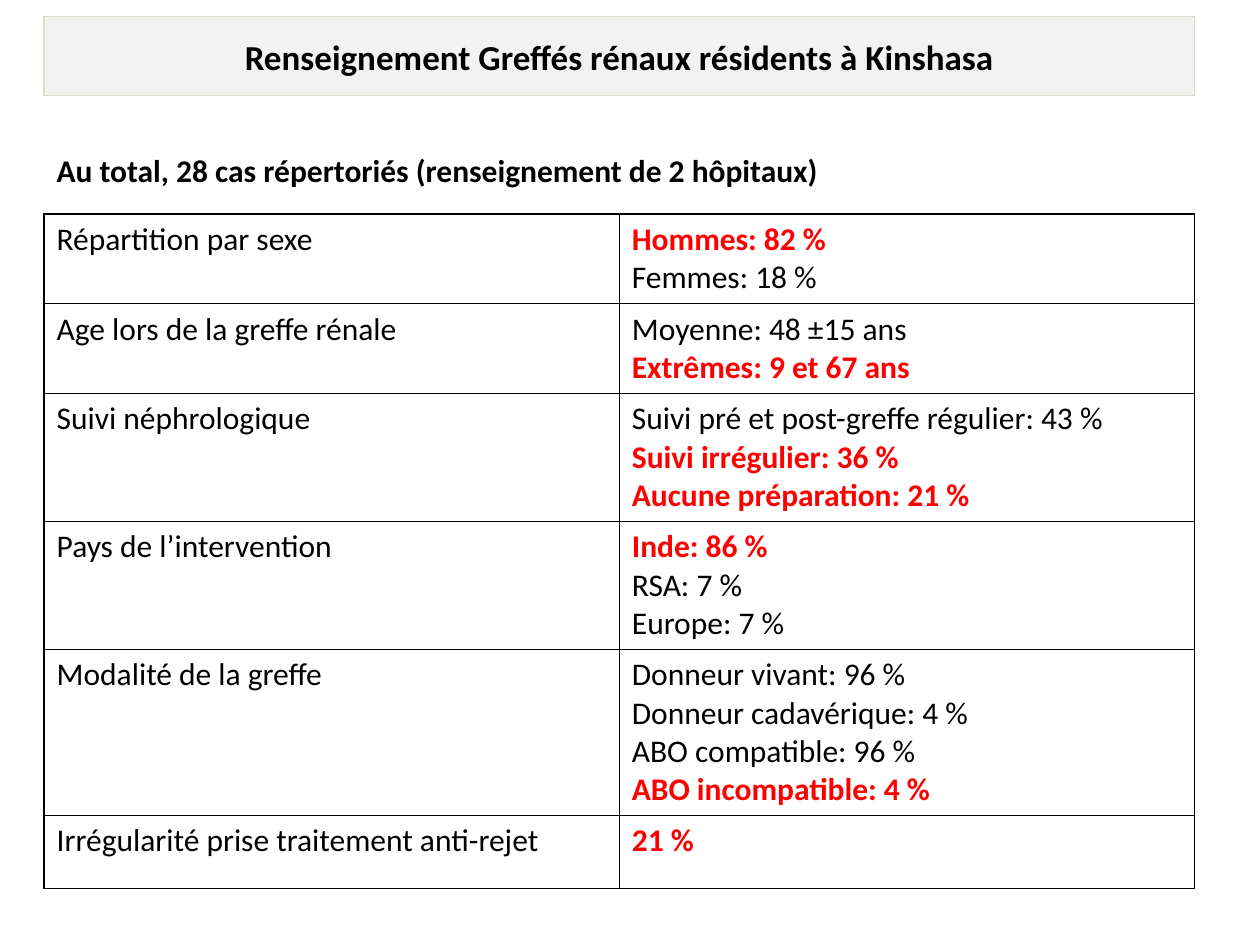
from lxml.etree import SubElement
from pptx import Presentation
from pptx.dml.color import RGBColor as Color
from pptx.enum.text import MSO_ANCHOR as Anchor, PP_ALIGN as Align
from pptx.oxml.ns import qn
from pptx.util import Inches, Pt

LEFT, WIDTH = 0.35, 9.13
BLACK, RED = "000000", "FF0000"
ROWS = [
    ("Répartition par sexe", ["Hommes: 82 %", "Femmes: 18 %"], {0}),
    ("Age lors de la greffe rénale",
     ["Moyenne: 48 ±15 ans", "Extrêmes: 9 et 67 ans"], {1}),
    ("Suivi néphrologique",
     ["Suivi pré et post-greffe régulier: 43 %", "Suivi irrégulier: 36 %",
      "Aucune préparation: 21 %"], {1, 2}),
    ("Pays de l’intervention",
     ["Inde: 86 %", "RSA: 7 %", "Europe: 7 %"], {0}),
    ("Modalité de la greffe",
     ["Donneur vivant: 96 %", "Donneur cadavérique: 4 %",
      "ABO compatible: 96 %", "ABO incompatible: 4 %"], {3}),
    ("Irrégularité prise traitement anti-rejet", ["21 %"], {0}),
]


def paint(target, color):
    """Give a fill or a font colour a solid hex colour."""
    target.solid()
    target.fore_color.rgb = Color.from_string(color)


def write(para, text, size=18, color=BLACK, bold=False, align=Align.LEFT):
    """Write one formatted run in a paragraph."""
    para.alignment = align
    span = para.add_run()
    span.text = text
    span.font.name = "Calibri"
    span.font.size = Pt(size)
    span.font.bold = bold
    paint(span.font.fill, color)


def place(shape, left, top, width, height):
    """Move and size a shape in inches."""
    shape.left, shape.top = Inches(left), Inches(top)
    shape.width, shape.height = Inches(width), Inches(height)


def add_title(page, text):
    """Format the title placeholder as a grey banner."""
    title = page.shapes.title
    place(title, LEFT, 0.13, WIDTH, 0.63)
    paint(title.fill, "F2F2F2")
    paint(title.line.fill, "DEDED0")
    title.line.width = Pt(0.75)
    title.text_frame.vertical_anchor = Anchor.MIDDLE
    write(title.text_frame.paragraphs[0], text, size=20, bold=True,
          align=Align.CENTER)


def add_summary(page, text):
    """Add the bold sentence above the table."""
    box = page.shapes.add_textbox(Inches(LEFT), Inches(1.15), Inches(6.85),
                                  Inches(0.4))
    box.text_frame.word_wrap = True
    write(box.text_frame.paragraphs[0], text, bold=True)


def add_borders(cell):
    """Draw thin black lines on all four sides of a cell."""
    properties = cell._tc.get_or_add_tcPr()
    for index, side in enumerate(("lnL", "lnR", "lnT", "lnB")):
        line = properties.makeelement(qn(f"a:{side}"), {"w": str(Pt(1))})
        fill = SubElement(line, qn("a:solidFill"))
        SubElement(fill, qn("a:srgbClr"), val=BLACK)
        properties.insert(index, line)


def fill_cell(cell, lines, marked=()):
    """Write the lines of a cell, with the marked ones in bold red."""
    cell.fill.background()
    add_borders(cell)
    frame = cell.text_frame
    for index, text in enumerate(lines):
        para = frame.add_paragraph() if index else frame.paragraphs[0]
        strong = index in marked
        write(para, text, color=RED if strong else BLACK, bold=strong)


def add_findings(page, rows):
    """Add the two-column table, each row as tall as its lines need."""
    heights = [max(0.58, 0.1 + 0.3 * len(lines)) for _, lines, _ in rows]
    table = page.shapes.add_table(len(rows), 2, Inches(LEFT), Inches(1.7),
                                  Inches(WIDTH), Inches(sum(heights))).table
    table.first_row = table.horz_banding = False
    for index, (label, lines, marked) in enumerate(rows):
        table.rows[index].height = Inches(heights[index])
        fill_cell(table.cell(index, 0), [label])
        fill_cell(table.cell(index, 1), lines, marked)


def main():
    """Build the slide and save it."""
    deck = Presentation()
    deck.slide_width, deck.slide_height = Inches(10), Inches(7.5)
    page = deck.slides.add_slide(deck.slide_layouts[5])
    add_title(page, "Renseignement Greffés rénaux résidents à Kinshasa")
    add_findings(page, ROWS)
    add_summary(page,
                "Au total, 28 cas répertoriés (renseignement de 2 hôpitaux)")
    deck.save("out.pptx")


if __name__ == "__main__":
    main()
